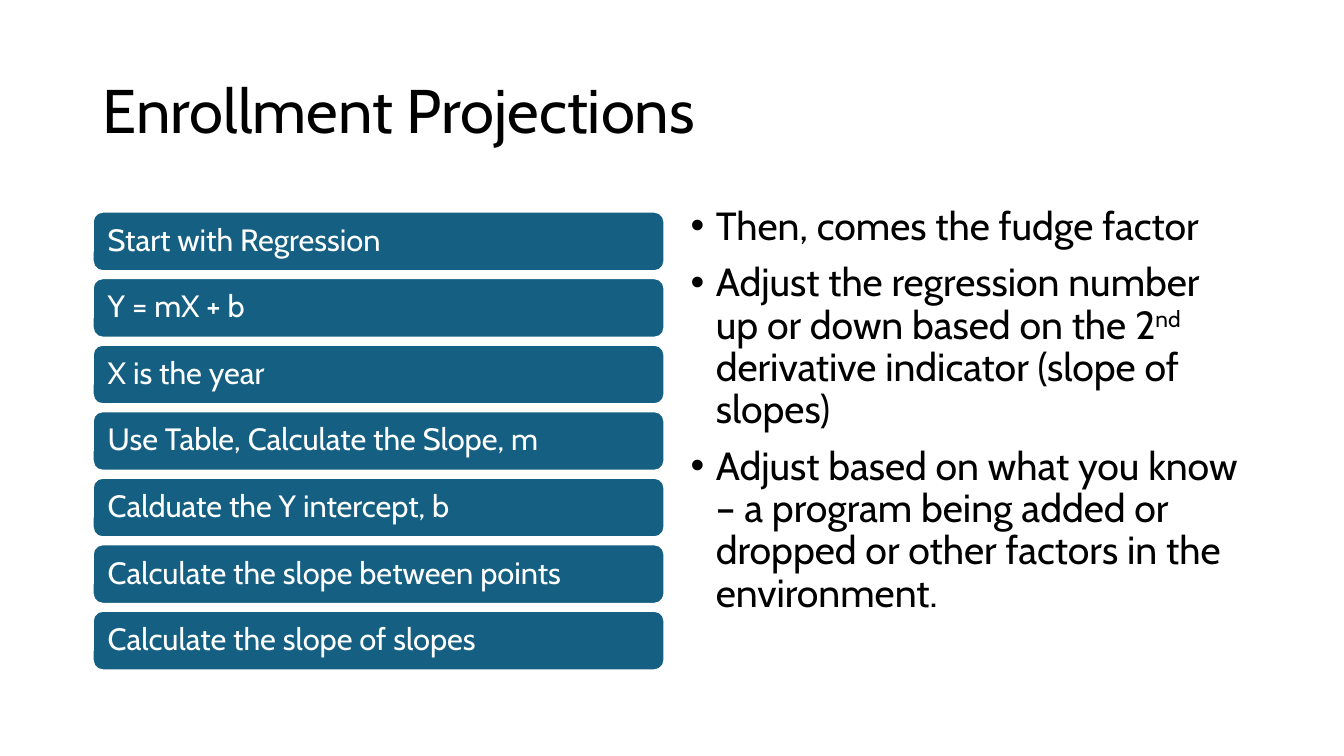
from pptx import Presentation
from pptx.dml.color import RGBColor
from pptx.enum import shapes, text
from pptx.util import Inches, Pt

BLACK = RGBColor(0x00, 0x00, 0x00)
WHITE = RGBColor(0xFF, 0xFF, 0xFF)
TEAL = RGBColor(0x15, 0x60, 0x82)
FONT = "Cabin"

STEPS = [
    "Start with Regression",
    "Y = mX + b",
    "X is the year",
    "Use Table, Calculate the Slope, m",
    "Calduate the Y intercept, b",
    "Calculate the slope between points",
    "Calculate the slope of slopes",
]
ADJUSTMENTS = [
    [("Then, comes the fudge factor", False)],
    [
        ("Adjust the regression number up or down based on the 2", False),
        ("nd", True),
        (" derivative indicator (slope of slopes)", False),
    ],
    [("Adjust based on what you know – a program being added or dropped "
      "or other factors in the environment.", False)],
]


def place(sp, box):
    sp.left, sp.top, sp.width, sp.height = (Inches(v) for v in box)


def format_paragraph(p, size, color):
    p.alignment = text.PP_ALIGN.LEFT
    p.line_spacing = 0.9
    for r in p.runs:
        r.font.name = FONT
        r.font.size = Pt(size)
        r.font.color.rgb = color


def add_title(s, box):
    sp = s.shapes.title
    place(sp, box)
    tf = sp.text_frame
    tf.text = "Enrollment Projections"
    tf.auto_size = text.MSO_AUTO_SIZE.NONE
    tf.vertical_anchor = text.MSO_ANCHOR.MIDDLE
    format_paragraph(tf.paragraphs[0], 44, BLACK)


def add_steps(s, box):
    left, top, width, height = box
    gap = 0.07
    bar_height = (height - gap * (len(STEPS) - 1)) / len(STEPS)
    for i, step in enumerate(STEPS):
        sp = s.shapes.add_shape(shapes.MSO_SHAPE.ROUNDED_RECTANGLE, 0, 0, 0, 0)
        place(sp, (left, top + i * (bar_height + gap), width, bar_height))
        sp.shadow.inherit = False
        sp.fill.solid()
        sp.fill.fore_color.rgb = TEAL
        sp.line.color.rgb = WHITE
        sp.line.width = Pt(1.5)
        tf = sp.text_frame
        tf.text = step
        tf.word_wrap = True
        tf.vertical_anchor = text.MSO_ANCHOR.MIDDLE
        tf.margin_left = tf.margin_right = Inches(0.12)
        format_paragraph(tf.paragraphs[0], 22, WHITE)


def add_adjustments(s, box):
    sp = s.placeholders[1]
    place(sp, box)
    tf = sp.text_frame
    tf.auto_size = text.MSO_AUTO_SIZE.NONE
    for i, parts in enumerate(ADJUSTMENTS):
        p = tf.add_paragraph() if i else tf.paragraphs[0]
        for words, raised in parts:
            r = p.add_run()
            r.text = words
            if raised:
                r.font._element.set("baseline", "30000")
        format_paragraph(p, 28, BLACK)
        p.space_before = Pt(10)
        pPr = p._p.get_or_add_pPr()
        pPr.set("marL", str(Inches(0.25)))
        pPr.set("indent", str(-Inches(0.25)))


def main():
    prs = Presentation()
    prs.slide_width = Inches(13.33)
    prs.slide_height = Inches(7.5)
    s = prs.slides.add_slide(prs.slide_layouts[1])
    add_title(s, (0.92, 0.4, 11.5, 1.45))
    add_steps(s, (0.92, 2.1, 5.67, 4.55))
    add_adjustments(s, (6.75, 2, 5.67, 4.76))
    prs.save("out.pptx")


if __name__ == "__main__":
    main()
